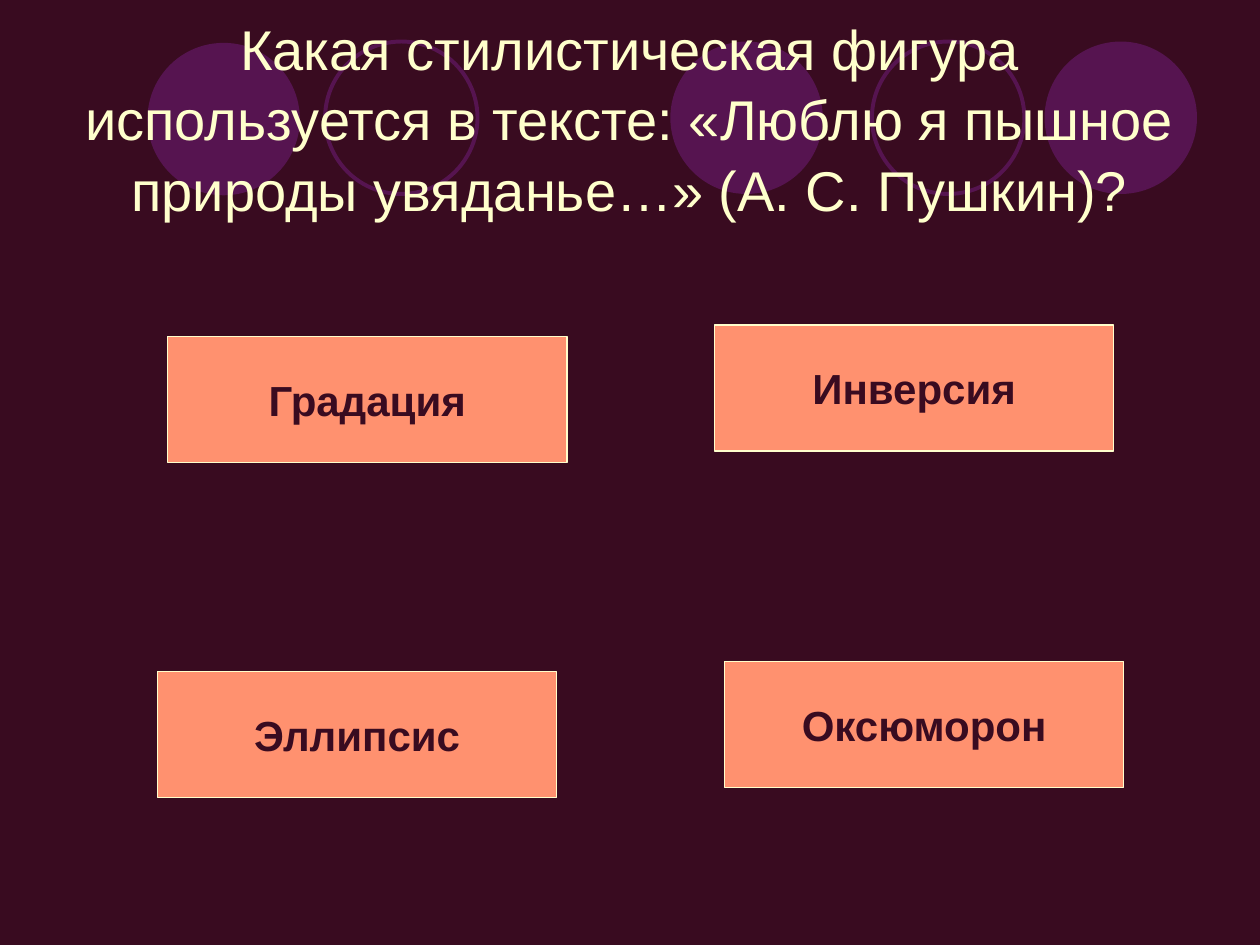
from dataclasses import dataclass

from pptx import Presentation
from pptx import util as u
from pptx.dml.color import RGBColor
from pptx.enum import shapes, text


@dataclass(frozen=True)
class Theme:
    back: RGBColor = RGBColor(0x39, 0x0B, 0x20)
    orb: RGBColor = RGBColor(0x56, 0x14, 0x50)
    pale: RGBColor = RGBColor(0xFF, 0xFF, 0xCC)
    coral: RGBColor = RGBColor(0xFF, 0x91, 0x6F)
    font: str = "Arial"
    head: int = 32
    body: int = 24


THEME = Theme()
ORB = 1.21
ORBS = [
    (5.32, 0.33, True),
    (8.29, 0.33, True),
    (1.17, 0.34, True),
    (6.92, 0.33, False),
    (2.58, 0.33, False),
]
ANSWERS = [
    ("Эллипсис", 1.25, 5.33),
    ("Градация", 1.33, 2.67),
    ("Инверсия", 5.67, 2.58),
    ("Оксюморон", 5.75, 5.25),
]
QUESTION = (
    "Какая стилистическая фигура используется в тексте: "
    "«Люблю я пышное природы увяданье…» (А. С. Пушкин)?"
)


def write(shape, words, size, color, bold=False, wrap=True, space=1.0):
    frame = shape.text_frame
    frame.auto_size = text.MSO_AUTO_SIZE.NONE
    frame.word_wrap = wrap
    frame.vertical_anchor = text.MSO_ANCHOR.MIDDLE
    para = frame.paragraphs[0]
    para.alignment = text.PP_ALIGN.CENTER
    para.line_spacing = space
    run = para.add_run()
    run.text = words
    font = run.font
    font.name = THEME.font
    font.size = u.Pt(size)
    font.bold = bold
    font.color.rgb = color


def draw(slide, kind, box, fill=None, line=None, width=0.75):
    shape = slide.shapes.add_shape(kind, *map(u.Inches, box))
    shape.shadow.inherit = False
    if fill is None:
        shape.fill.background()
    else:
        shape.fill.solid()
        shape.fill.fore_color.rgb = fill
    if line is None:
        shape.line.fill.background()
    else:
        shape.line.color.rgb = line
        shape.line.width = u.Pt(width)
    return shape


def add_orb(slide, left, top, solid):
    paint = {"fill": THEME.orb} if solid else {"line": THEME.orb, "width": 2.25}
    draw(slide, shapes.MSO_SHAPE.OVAL, (left, top, ORB, ORB), **paint)


def add_title(slide, words):
    title = slide.shapes.title
    title.left, title.top = u.Inches(0.5), u.Inches(0.3)
    title.width, title.height = u.Inches(9), u.Inches(1.25)
    write(title, words, THEME.head, THEME.pale, space=1.05)
    title.element.getparent().append(title.element)


def add_answer(slide, words, left, top):
    box = (left, top, 3.17, 1)
    shape = draw(slide, shapes.MSO_SHAPE.RECTANGLE, box, THEME.coral, THEME.pale)
    write(shape, words, THEME.body, THEME.back, bold=True, wrap=False)


def main():
    deck = Presentation()
    deck.slide_width, deck.slide_height = u.Inches(10), u.Inches(7.5)
    slide = deck.slides.add_slide(deck.slide_layouts[5])
    slide.background.fill.solid()
    slide.background.fill.fore_color.rgb = THEME.back
    for orb in ORBS:
        add_orb(slide, *orb)
    add_title(slide, QUESTION)
    for answer in ANSWERS:
        add_answer(slide, *answer)
    deck.save("out.pptx")


if __name__ == "__main__":
    main()
